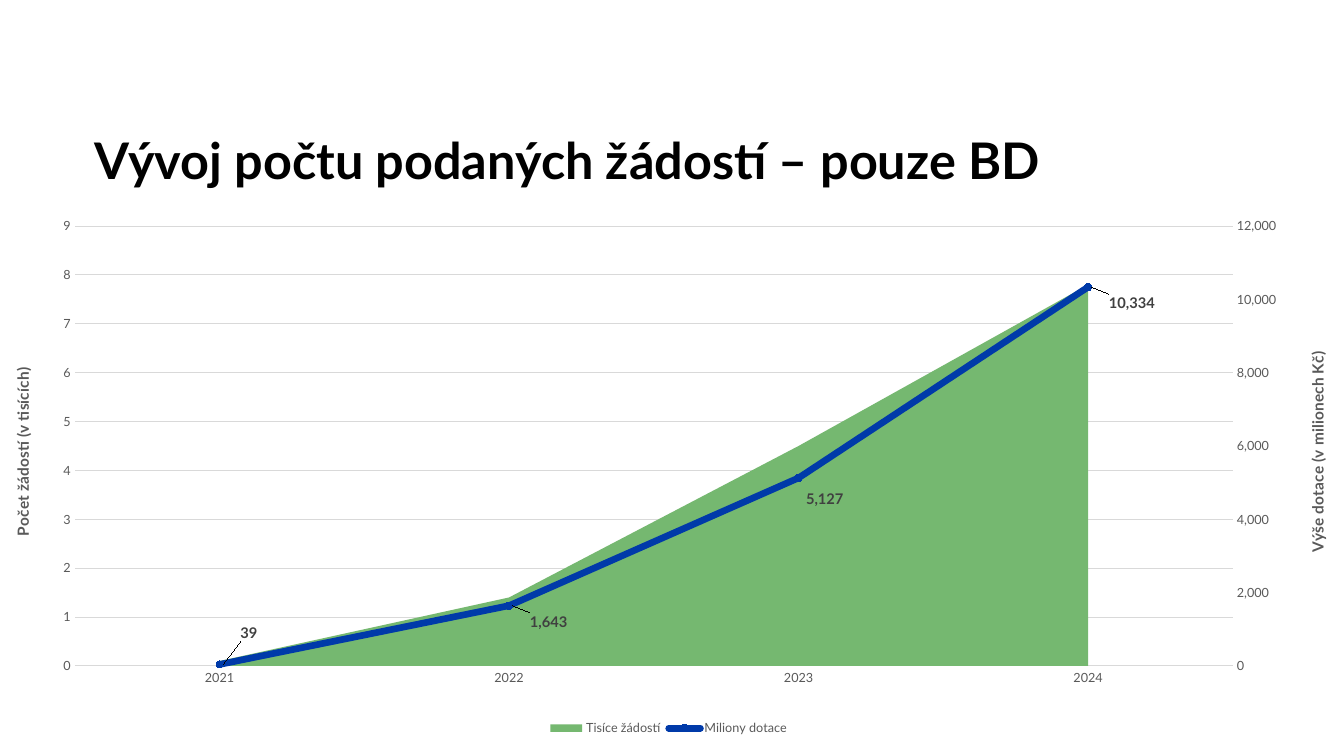
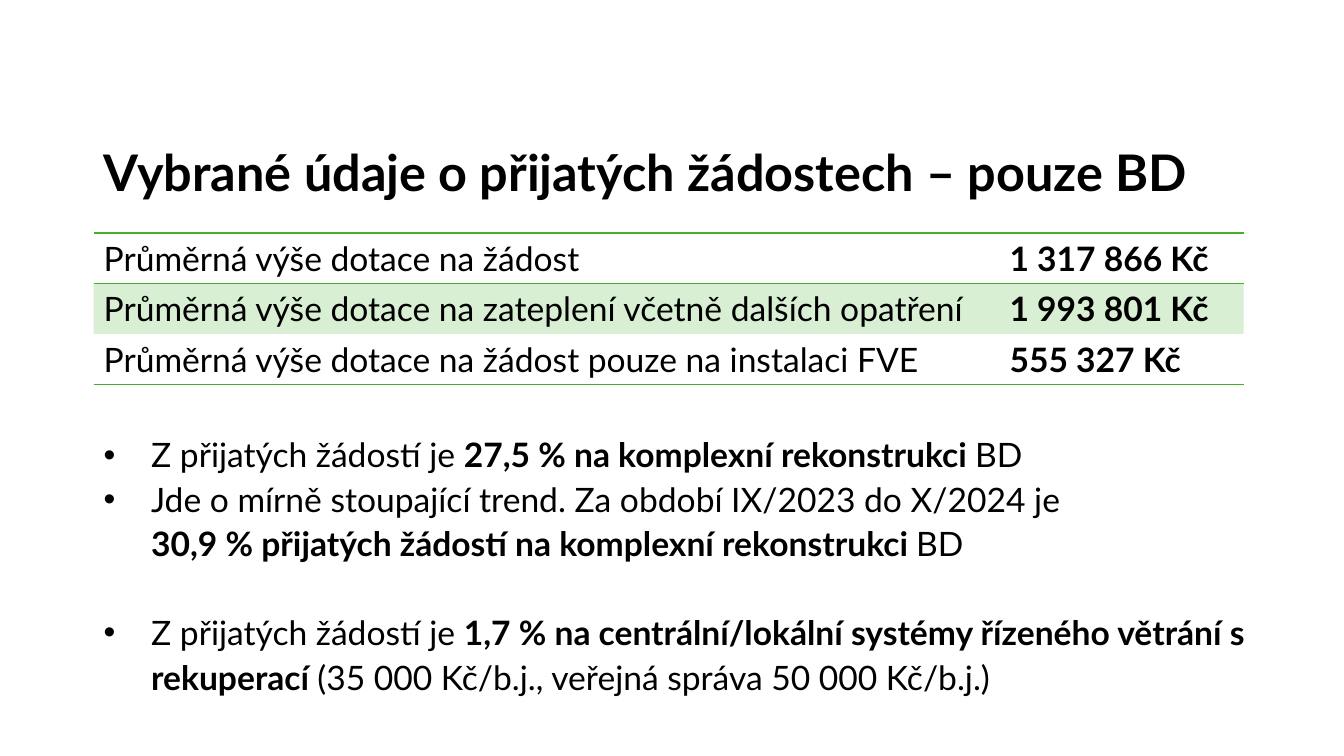
from dataclasses import dataclass

from pptx import Presentation
from pptx.chart.axis import ValueAxis
from pptx.chart.data import CategoryChartData
from pptx.dml.color import RGBColor
from pptx.enum.chart import (
    XL_CHART_TYPE, XL_LABEL_POSITION, XL_LEGEND_POSITION, XL_MARKER_STYLE, XL_TICK_MARK,
)
from pptx.enum.text import MSO_ANCHOR
from pptx.oxml import parse_xml
from pptx.oxml.ns import nsdecls
from pptx.util import Cm, Pt

AREA = XL_CHART_TYPE.AREA_STACKED
LABEL_RIGHT = XL_LABEL_POSITION.RIGHT
LEGEND_BOTTOM = XL_LEGEND_POSITION.BOTTOM
CIRCLE = XL_MARKER_STYLE.CIRCLE
NO_TICK = XL_TICK_MARK.NONE
TOP = MSO_ANCHOR.TOP
MIDDLE = MSO_ANCHOR.MIDDLE
THOUSANDS = "#,##0"


@dataclass(frozen=True)
class Theme:
    font: str = "Lato"
    text: str = "000000"
    muted: str = "595959"
    label: str = "404040"
    grid: str = "D9D9D9"
    requests: str = "75B870"
    subsidy: str = "003AA9"
    accent: str = "43B02A"
    title_size: float = 36
    body_size: float = 24
    axis_size: float = 9
    axis_title_size: float = 11
    label_size: float = 10.5


@dataclass(frozen=True)
class Box:
    left: float
    top: float
    width: float
    height: float

    def lengths(self):
        return Cm(self.left), Cm(self.top), Cm(self.width), Cm(self.height)


@dataclass(frozen=True)
class Year:
    name: str
    requests: float
    subsidy: int
    label_shift: tuple[float, float]


@dataclass(frozen=True)
class Scale:
    title: str
    maximum: float
    step: float


@dataclass(frozen=True)
class Average:
    label: str
    amount: str
    rules: tuple[str, ...]
    tinted: bool = False


@dataclass(frozen=True)
class Span:
    text: str
    bold: bool = False


@dataclass(frozen=True)
class Bullet:
    spans: tuple[Span, ...]
    space_before: float = 0


THEME = Theme()

YEARS = (
    Year("2021", 0.1, 39, (0.01, -0.06)),
    Year("2022", 1.4, 1643, (0.01, 0.03)),
    Year("2023", 4.5, 5127, (0, 0.04)),
    Year("2024", 7.8, 10334, (0.01, 0.03)),
)
REQUEST_SCALE = Scale("Počet žádostí (v tisících)", 9, 1)
SUBSIDY_SCALE = Scale("Výše dotace (v milionech Kč)", 12000, 2000)

AVERAGES = (
    Average("Průměrná výše dotace na žádost", "1 317 866 Kč", ("T", "B")),
    Average("Průměrná výše dotace na zateplení včetně dalších opatření",
            "1 993 801 Kč", ("T",), tinted=True),
    Average("Průměrná výše dotace na žádost pouze na instalaci FVE",
            "555 327 Kč", ("B",)),
)

BULLETS = (
    Bullet((Span("Z přijatých žádostí je "),
            Span("27,5 % na komplexní rekonstrukci ", True), Span("BD"))),
    Bullet((Span("Jde o mírně stoupající trend. Za období IX/2023 do X/2024 je\n"),
            Span("30,9 % přijatých žádostí na komplexní rekonstrukci ", True), Span("BD"))),
    Bullet((Span("Z přijatých žádostí je "),
            Span("1,7 % na centrální/lokální systémy řízeného větrání s rekuperací ", True),
            Span("(35 000 Kč/b.j., veřejná správa 50 000 Kč/b.j.)")), 32),
)


def rgb(value: str) -> RGBColor:
    return RGBColor.from_string(value)


def style_font(font, *, size: float, colour: str = THEME.text, bold: bool = False) -> None:
    font.name = THEME.font
    font.size = Pt(size)
    font.bold = bold
    font.color.rgb = rgb(colour)


def write(paragraph, text: str, *, size: float, colour: str = THEME.text,
          bold: bool = False) -> None:
    for position, line in enumerate(text.split("\n")):
        if position:
            paragraph.add_line_break()
        if line:
            run = paragraph.add_run()
            run.text = line
            style_font(run.font, size=size, colour=colour, bold=bold)


def add_frame(slide, box: Box):
    frame = slide.shapes.add_textbox(*box.lengths()).text_frame
    frame.word_wrap = True
    frame.vertical_anchor = TOP
    return frame


def add_title(slide, text: str, left: float, top: float) -> None:
    frame = add_frame(slide, Box(left, top, 29.21, 2.18))
    write(frame.paragraphs[0], text, size=THEME.title_size, bold=True)


def manual_layout(**settings):
    parts = "".join(f'<c:{tag} val="{value}"/>' for tag, value in settings.items())
    return parse_xml(
        f'<c:layout {nsdecls("c")}><c:manualLayout>{parts}</c:manualLayout></c:layout>')


def style_value_axis(value_axis_xml, scale: Scale, gridlines: bool) -> None:
    axis = ValueAxis(value_axis_xml)
    axis.minimum_scale = 0
    axis.maximum_scale = scale.maximum
    axis.major_unit = scale.step
    axis.major_tick_mark = axis.minor_tick_mark = NO_TICK
    axis.has_major_gridlines = gridlines
    if gridlines:
        grid = axis.major_gridlines.format.line
        grid.color.rgb = rgb(THEME.grid)
        grid.width = Pt(0.75)
    axis.format.line.fill.background()
    axis.tick_labels.number_format = THOUSANDS
    axis.tick_labels.number_format_is_linked = False
    style_font(axis.tick_labels.font, size=THEME.axis_size, colour=THEME.muted)
    heading = axis.axis_title.text_frame
    write(heading.paragraphs[0], scale.title, size=THEME.axis_title_size,
          colour=THEME.muted, bold=True)
    body = value_axis_xml.xpath("c:title//a:bodyPr")[0]
    body.set("rot", "-5400000")
    body.set("vert", "horz")


def move_subsidy_to_second_axis(plot_area):
    area = plot_area.xpath("c:areaChart")[0]
    subsidy = area.xpath("c:ser")[1]
    line = parse_xml(
        f'<c:lineChart {nsdecls("c")}><c:grouping val="standard"/><c:varyColors val="0"/>'
        '<c:marker val="1"/><c:axId val="5001"/><c:axId val="5002"/></c:lineChart>')
    line.insert(2, subsidy)
    area.addnext(line)
    value_axis = parse_xml(
        f'<c:valAx {nsdecls("c")}><c:axId val="5002"/><c:scaling/><c:delete val="0"/>'
        '<c:axPos val="r"/><c:majorTickMark val="none"/><c:minorTickMark val="none"/>'
        '<c:tickLblPos val="nextTo"/><c:crossAx val="5001"/><c:crosses val="max"/>'
        '<c:crossBetween val="between"/></c:valAx>')
    category_axis = parse_xml(
        f'<c:catAx {nsdecls("c")}><c:axId val="5001"/><c:scaling/><c:delete val="1"/>'
        '<c:axPos val="b"/><c:crossAx val="5002"/><c:crosses val="autoZero"/></c:catAx>')
    plot_area.xpath("c:valAx")[0].addnext(value_axis)
    value_axis.addnext(category_axis)
    return subsidy


def style_subsidy(series, series_xml) -> None:
    series.smooth = False
    series.format.line.color.rgb = rgb(THEME.subsidy)
    series.format.line.width = Pt(4.75)
    series_xml.xpath("c:spPr/a:ln")[0].set("cap", "rnd")
    series.marker.style = CIRCLE
    series.marker.size = 5
    for part in (series.marker.format.fill, series.marker.format.line.fill):
        part.solid()
        part.fore_color.rgb = rgb(THEME.subsidy)
    for position, year in enumerate(YEARS):
        label = series.points[position].data_label
        label.position = LABEL_RIGHT
        style_font(label.font, size=THEME.label_size, colour=THEME.label, bold=True)
        shift_x, shift_y = year.label_shift
        index = series_xml.xpath("c:dLbls/c:dLbl/c:idx")[position]
        index.addnext(manual_layout(x=shift_x, y=shift_y))


def add_trend_chart(slide, box: Box) -> None:
    data = CategoryChartData()
    data.categories = [year.name for year in YEARS]
    data.add_series("Tisíce žádostí", [year.requests for year in YEARS], "0.0")
    data.add_series("Miliony dotace", [year.subsidy for year in YEARS], THOUSANDS)
    chart = slide.shapes.add_chart(AREA, *box.lengths(), data).chart
    chart.has_title = False
    style_font(chart.font, size=10)

    plot_area = chart.element.xpath(".//c:plotArea")[0]
    for layout in plot_area.xpath("c:layout"):
        plot_area.remove(layout)
    plot_area.insert(0, manual_layout(layoutTarget="inner", xMode="edge", yMode="edge",
                                      x=0.058, y=0.029, w=0.862, h=0.831))
    subsidy_xml = move_subsidy_to_second_axis(plot_area)
    for crossing in plot_area.xpath("c:valAx/c:crossBetween"):
        crossing.set("val", "between")

    requests_plot, subsidy_plot = chart.plots
    requests_plot.vary_by_categories = False
    requests_fill = requests_plot.series[0].format.fill
    requests_fill.solid()
    requests_fill.fore_color.rgb = rgb(THEME.requests)
    style_subsidy(subsidy_plot.series[0], subsidy_xml)

    requests_axis, subsidy_axis = plot_area.xpath("c:valAx")
    style_value_axis(requests_axis, REQUEST_SCALE, gridlines=True)
    style_value_axis(subsidy_axis, SUBSIDY_SCALE, gridlines=False)
    years_axis = chart.category_axis
    years_axis.major_tick_mark = years_axis.minor_tick_mark = NO_TICK
    years_axis.has_major_gridlines = False
    years_axis.format.line.color.rgb = rgb(THEME.grid)
    years_axis.format.line.width = Pt(0.75)
    style_font(years_axis.tick_labels.font, size=THEME.axis_size, colour=THEME.muted)

    chart.has_legend = True
    chart.legend.position = LEGEND_BOTTOM
    chart.legend.include_in_layout = False
    style_font(chart.legend.font, size=THEME.axis_size, colour=THEME.muted)


def format_cell(cell, average: Average) -> None:
    cell.vertical_anchor = MIDDLE
    properties = cell._tc.get_or_add_tcPr()
    if average.tinted:
        cell.fill.solid()
        cell.fill.fore_color.rgb = rgb(THEME.accent)
        tint = properties.xpath("a:solidFill/a:srgbClr")[0]
        tint.append(parse_xml(f'<a:alpha {nsdecls("a")} val="20000"/>'))
    else:
        cell.fill.background()
    for position, side in enumerate("LRTB"):
        paint = (f'<a:solidFill><a:srgbClr val="{THEME.accent}"/></a:solidFill>'
                 if side in average.rules else "<a:noFill/>")
        properties.insert(position, parse_xml(
            f'<a:ln{side} {nsdecls("a")} w="12700">{paint}</a:ln{side}>'))


def add_averages(slide, box: Box, label_width: float) -> None:
    table = slide.shapes.add_table(len(AVERAGES), 2, *box.lengths()).table
    table.first_row = table.horz_banding = False
    table.columns[0].width = Cm(label_width)
    table.columns[1].width = Cm(box.width - label_width)
    for row, average in enumerate(AVERAGES):
        for column, text in enumerate((average.label, average.amount)):
            cell = table.cell(row, column)
            write(cell.text_frame.paragraphs[0], text, size=THEME.body_size, bold=column == 1)
            format_cell(cell, average)


def add_bullets(slide, box: Box) -> None:
    frame = add_frame(slide, box)
    for position, bullet in enumerate(BULLETS):
        paragraph = frame.add_paragraph() if position else frame.paragraphs[0]
        properties = paragraph._p.get_or_add_pPr()
        properties.set("marL", str(Cm(1.2)))
        properties.set("indent", str(-Cm(1.2)))
        properties.append(parse_xml(f'<a:buFont {nsdecls("a")} typeface="Arial"/>'))
        properties.append(parse_xml(f'<a:buChar {nsdecls("a")} char="•"/>'))
        paragraph.line_spacing = 1.1
        paragraph.space_before = Pt(bullet.space_before)
        for span in bullet.spans:
            write(paragraph, span.text, size=THEME.body_size, bold=span.bold)


def main() -> None:
    deck = Presentation()
    deck.slide_width, deck.slide_height = Cm(33.87), Cm(19.05)
    blank = deck.slide_layouts[6]

    trend = deck.slides.add_slide(blank)
    add_title(trend, "Vývoj počtu podaných žádostí – pouze BD", 2.13, 3.12)
    add_trend_chart(trend, Box(-0.08, 5.31, 33.86, 13.34))

    details = deck.slides.add_slide(blank)
    add_title(details, "Vybrané údaje o přijatých žádostech – pouze BD", 2.36, 3.43)
    add_averages(details, Box(2.36, 5.87, 28.98, 3.81), 22.83)
    add_bullets(details, Box(2.36, 10.72, 29.97, 7.59))

    deck.save("out.pptx")


if __name__ == "__main__":
    main()
